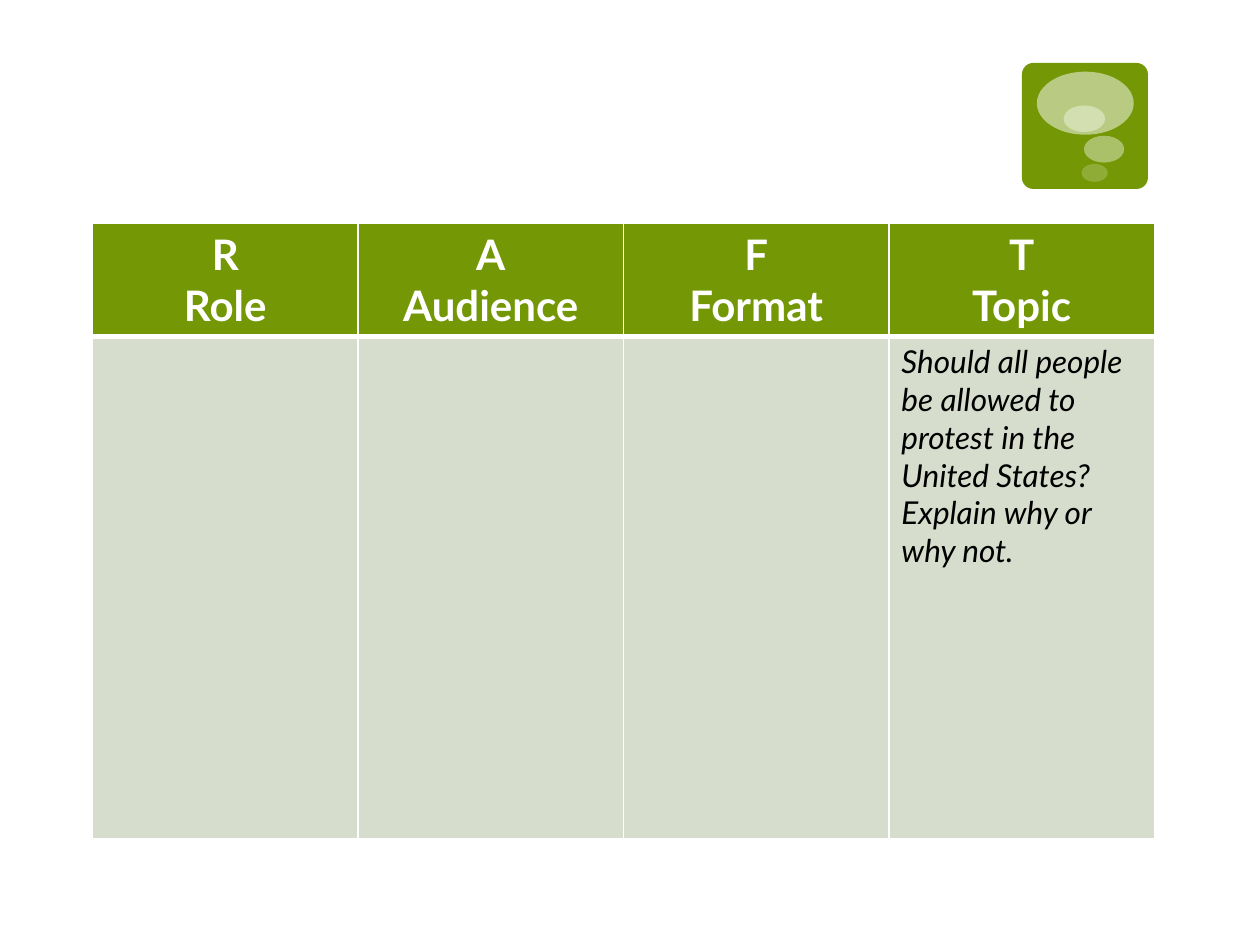
from dataclasses import dataclass

from lxml import etree
from pptx import Presentation
from pptx.dml.color import RGBColor
from pptx.enum.shapes import MSO_SHAPE
from pptx.enum.text import PP_ALIGN
from pptx.oxml.ns import qn
from pptx.util import Pt

ROUND, OVAL = MSO_SHAPE.ROUNDED_RECTANGLE, MSO_SHAPE.OVAL
CENTER, LEFT = PP_ALIGN.CENTER, PP_ALIGN.LEFT

GREEN = RGBColor(0x74, 0x98, 0x05)
PALE = RGBColor(0xD6, 0xDD, 0xCC)
WHITE = RGBColor(0xFF, 0xFF, 0xFF)
BLACK = RGBColor(0, 0, 0)

HEADS = ("R\nRole", "A\nAudience", "F\nFormat", "T\nTopic")
TOPIC = ("Should all people be allowed to protest in the United States? "
         "Explain why or why not.")
TASKS = ("", "", "", TOPIC)


@dataclass
class Bubble:
    left: float
    top: float
    width: float
    height: float
    alpha: int


@dataclass
class Band:
    texts: tuple
    height: float
    fill: RGBColor
    align: PP_ALIGN
    font: dict
    color: RGBColor
    edges: dict


BUBBLES = (
    Bubble(592.5, 41, 55.4, 36, 50),
    Bubble(619.4, 77.6, 23, 15.3, 40),
    Bubble(618, 93.7, 15, 10.2, 20),
    Bubble(607.8, 60.3, 23.7, 15.2, 38),
)
BANDS = (
    Band(HEADS, 64.8, GREEN, CENTER,
         {"name": "Lato", "size": Pt(24), "bold": True}, WHITE,
         {"L": 1, "R": 1, "T": 1, "B": 3}),
    Band(TASKS, 287, PALE, LEFT,
         {"name": "Lato", "size": Pt(18), "bold": False, "italic": True}, BLACK,
         {"L": 1, "R": 1, "T": 3, "B": 1}),
)


def add_plain(shapes, kind: MSO_SHAPE, box: tuple, color: RGBColor):
    """Add a shape with a solid fill and neither line nor shadow."""
    shape = shapes.add_shape(kind, *map(Pt, box))
    shape.shadow.inherit = False
    shape.fill.solid()
    shape.fill.fore_color.rgb = color
    shape.line.fill.background()
    return shape


def add_badge(slide) -> None:
    group = slide.shapes.add_group_shape()
    tile = add_plain(group.shapes, ROUND, (584, 36, 72, 72), GREEN)
    tile.adjustments[0] = 0.09
    for b in BUBBLES:
        oval = add_plain(group.shapes, OVAL,
                         (b.left, b.top, b.width, b.height), WHITE)
        tint = oval.fill._xPr.find(qn("a:solidFill"))[0]
        etree.SubElement(tint, qn("a:alpha"), val=str(b.alpha * 1000))


def set_edges(cell, edges: dict) -> None:
    props = cell._tc.get_or_add_tcPr()
    for spot, (side, width) in enumerate(edges.items()):
        line = etree.Element(qn(f"a:ln{side}"), w=str(Pt(width)))
        fill = etree.SubElement(line, qn("a:solidFill"))
        etree.SubElement(fill, qn("a:srgbClr"), val=str(WHITE))
        props.insert(spot, line)


def fill_cell(cell, text: str, band: Band) -> None:
    cell.fill.solid()
    cell.fill.fore_color.rgb = band.fill
    set_edges(cell, band.edges)
    cell.text = text
    for para in cell.text_frame.paragraphs:
        para.alignment = band.align
        for key, value in band.font.items():
            setattr(para.font, key, value)
        para.font.color.rgb = band.color
        for run in para.runs:
            for key, value in band.font.items():
                setattr(run.font, key, value)
            run.font.color.rgb = band.color


def add_grid(slide) -> None:
    total = sum(band.height for band in BANDS)
    frame = slide.shapes.add_table(len(BANDS), len(HEADS), Pt(52.9), Pt(127.4),
                                   Pt(606.8), Pt(total))
    table = frame.table
    for row, band in zip(table.rows, BANDS):
        row.height = Pt(band.height)
        for cell, text in zip(row.cells, band.texts):
            fill_cell(cell, text, band)


def main() -> None:
    deck = Presentation()
    deck.slide_width, deck.slide_height = Pt(720), Pt(540)
    slide = deck.slides.add_slide(deck.slide_layouts[6])
    add_badge(slide)
    add_grid(slide)
    deck.save("out.pptx")


if __name__ == "__main__":
    main()
